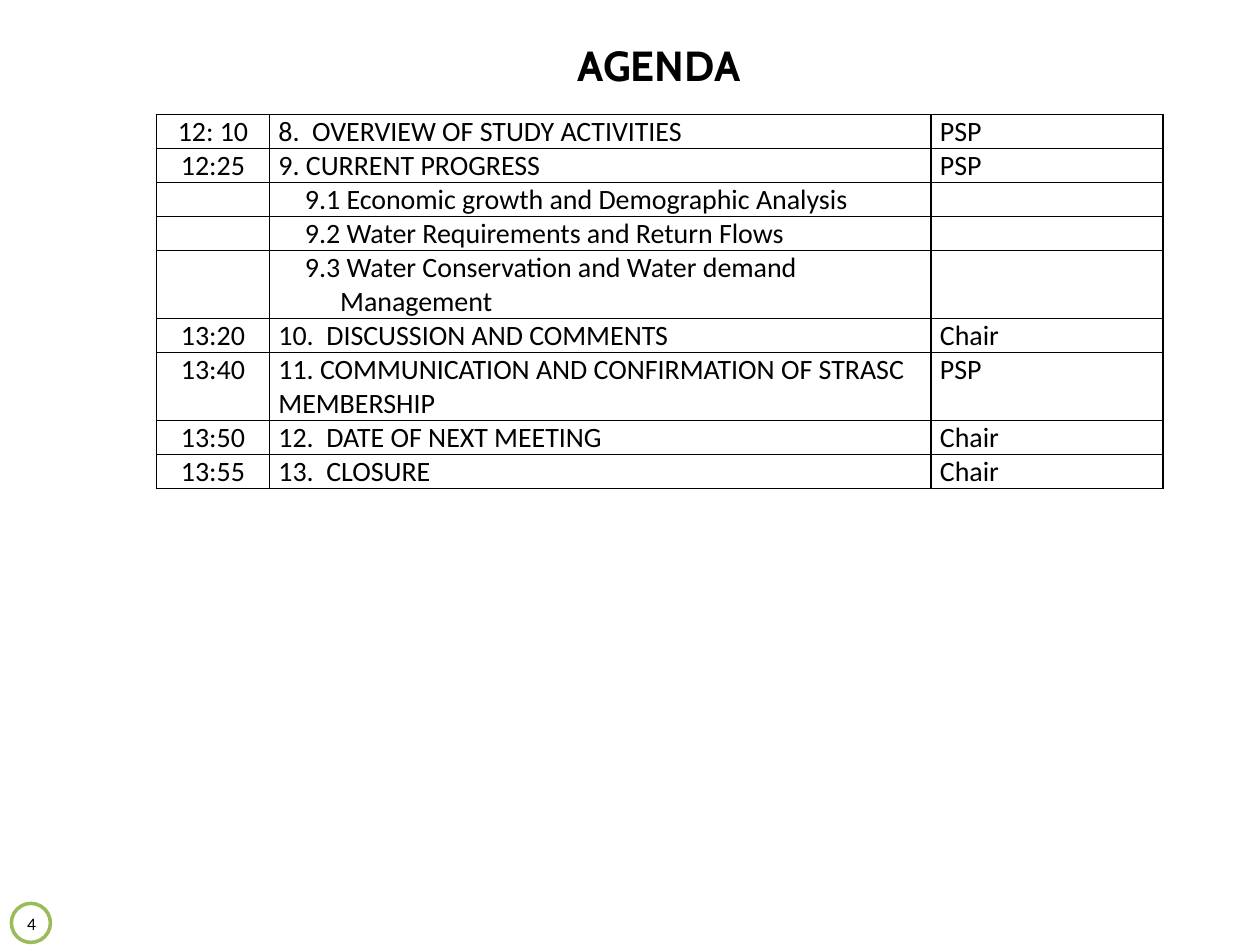
from dataclasses import dataclass

import pptx
import pptx.dml.color
import pptx.enum.shapes
import pptx.enum.text
import pptx.oxml.ns
import pptx.oxml.xmlchemy
import pptx.util
from lxml import etree
from pptx.util import Inches

COLORS = {"text": "000000", "border": "000000", "paper": "FFFFFF", "badge": "9BBB59"}
ALIGN = pptx.enum.text.PP_ALIGN
ANCHOR = pptx.enum.text.MSO_ANCHOR
LINE_HEIGHT = 0.27
COLUMN_WIDTHS = (0.9, 5.25, 1.84)
TABLE_TEXT_SIZE = 16


@dataclass
class AgendaItem:
    time: str
    topic: str
    presenter: str
    lines: int = 1
    is_subitem: bool = False


AGENDA = [
    AgendaItem("12: 10", "8.  OVERVIEW OF STUDY ACTIVITIES", "PSP"),
    AgendaItem("12:25", "9. CURRENT PROGRESS", "PSP"),
    AgendaItem("", "9.1 Economic growth and Demographic Analysis", "", is_subitem=True),
    AgendaItem("", "9.2 Water Requirements and Return Flows", "", is_subitem=True),
    AgendaItem("", "9.3 Water Conservation and Water demand Management", "",
               lines=2, is_subitem=True),
    AgendaItem("13:20", "10.  DISCUSSION AND COMMENTS", "Chair"),
    AgendaItem("13:40", "11. COMMUNICATION AND CONFIRMATION OF STRASC MEMBERSHIP", "PSP",
               lines=2),
    AgendaItem("13:50", "12.  DATE OF NEXT MEETING", "Chair"),
    AgendaItem("13:55", "13.  CLOSURE", "Chair"),
]


def color(name: str) -> pptx.dml.color.RGBColor:
    return pptx.dml.color.RGBColor.from_string(COLORS[name])


def add_run(paragraph, text: str, size: float, font_name: str = "Calibri",
            bold: bool = False) -> None:
    run = paragraph.add_run()
    run.text = text
    run.font.size = pptx.util.Pt(size)
    run.font.name = font_name
    run.font.bold = bold
    run.font.color.rgb = color("text")


def add_label(slide, box: tuple[float, float, float, float], text: str, size: float,
              font_name: str, bold: bool = False, side_margin: float = 0.1,
              anchor: ANCHOR = ANCHOR.TOP) -> None:
    """Add a centred one-line text box; box is left, top, width, height in inches."""
    frame = slide.shapes.add_textbox(*map(Inches, box)).text_frame
    frame.word_wrap = True
    frame.vertical_anchor = anchor
    frame.margin_left = frame.margin_right = Inches(side_margin)
    paragraph = frame.paragraphs[0]
    paragraph.alignment = ALIGN.CENTER
    add_run(paragraph, text, size, font_name, bold)


def add_page_badge(slide, number: str) -> None:
    circle = slide.shapes.add_shape(pptx.enum.shapes.MSO_SHAPE.OVAL, Inches(0.09),
                                    Inches(7.17), Inches(0.31), Inches(0.31))
    circle.shadow.inherit = False
    circle.fill.solid()
    circle.fill.fore_color.rgb = color("paper")
    circle.line.color.rgb = color("badge")
    circle.line.width = pptx.util.Pt(2)
    add_label(slide, (0.09, 7.2, 0.32, 0.2), number, 10, "Calibri", side_margin=0)


def add_borders(cell) -> None:
    properties = cell._tc.get_or_add_tcPr()
    for side in ("lnL", "lnR", "lnT", "lnB"):
        line = etree.SubElement(properties, pptx.oxml.ns.qn(f"a:{side}"),
                                w=str(pptx.util.Pt(1)))
        fill = etree.SubElement(line, pptx.oxml.ns.qn("a:solidFill"))
        etree.SubElement(fill, pptx.oxml.ns.qn("a:srgbClr"), val=COLORS["border"])


def fill_cell(cell, text: str, alignment: ALIGN, is_subitem: bool = False) -> None:
    add_borders(cell)
    cell.fill.background()
    cell.margin_left = cell.margin_right = Inches(0.07)
    cell.margin_top = cell.margin_bottom = 0
    paragraph = cell.text_frame.paragraphs[0]
    paragraph.alignment = alignment
    if is_subitem:
        cell.vertical_anchor = ANCHOR.MIDDLE
        properties = paragraph._p.get_or_add_pPr()
        properties.set("marL", str(Inches(0.49)))
        properties.set("indent", str(Inches(-0.28)))
    if text:
        add_run(paragraph, text, TABLE_TEXT_SIZE)
    else:
        # An empty cell needs its text size too, or it makes the row taller.
        etree.SubElement(paragraph._p, pptx.oxml.ns.qn("a:endParaRPr"),
                         sz=str(TABLE_TEXT_SIZE * 100))


def add_agenda_table(slide, items: list[AgendaItem]) -> None:
    height = LINE_HEIGHT * sum(item.lines for item in items)
    table = slide.shapes.add_table(len(items), len(COLUMN_WIDTHS), Inches(1.24), Inches(0.91),
                                   Inches(sum(COLUMN_WIDTHS)), Inches(height)).table
    table.first_row = table.horz_banding = False
    for column, width in zip(table.columns, COLUMN_WIDTHS):
        column.width = Inches(width)
    for row, item in zip(table.rows, items):
        row.height = Inches(LINE_HEIGHT * item.lines)
        time, topic, presenter = row.cells
        fill_cell(time, item.time, ALIGN.CENTER)
        fill_cell(topic, item.topic, ALIGN.LEFT, item.is_subitem)
        fill_cell(presenter, item.presenter, ALIGN.LEFT)


def main() -> None:
    presentation = pptx.Presentation()
    presentation.slide_width = Inches(10)
    presentation.slide_height = Inches(7.5)
    slide = presentation.slides.add_slide(presentation.slide_layouts[6])
    add_page_badge(slide, "4")
    add_label(slide, (0.96, 0.1, 8.54, 0.82), "AGENDA", 24, "Cabin", bold=True,
              anchor=ANCHOR.MIDDLE)
    add_agenda_table(slide, AGENDA)
    presentation.save("out.pptx")


if __name__ == "__main__":
    main()
